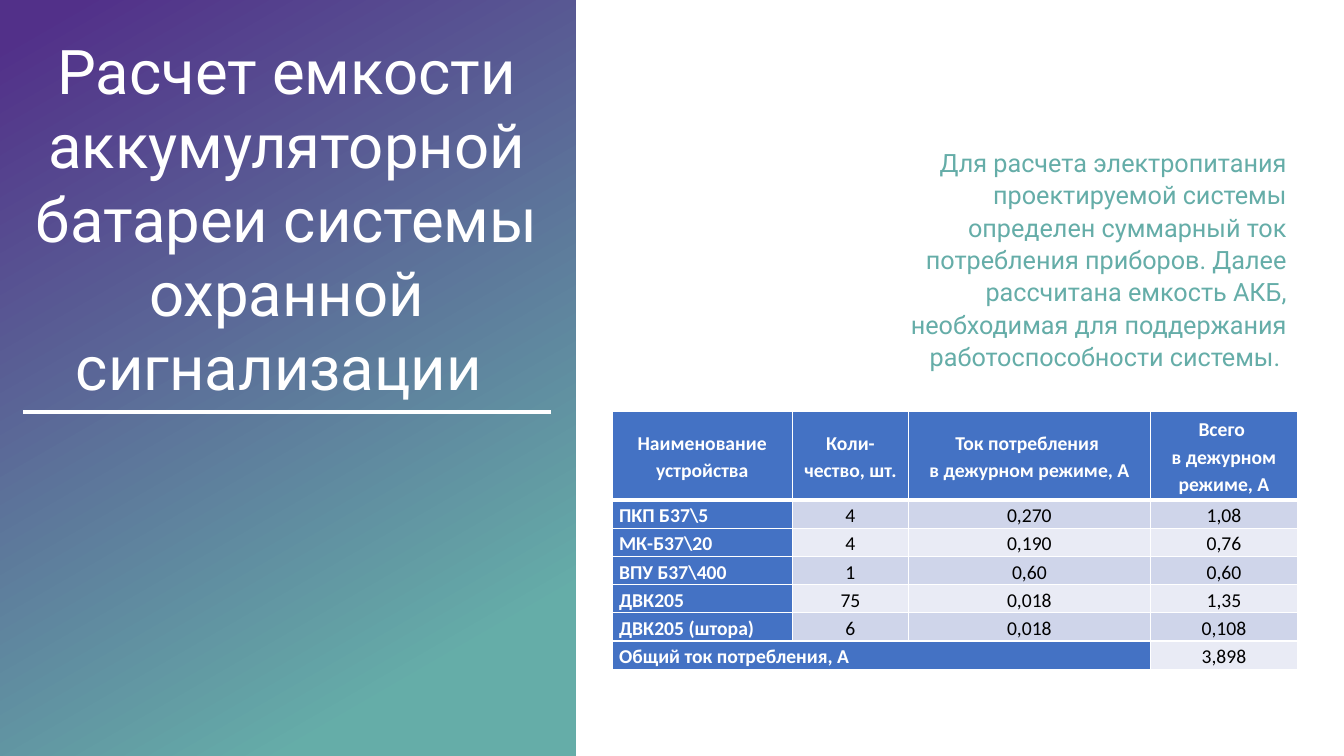
"""Build the slide on sizing the battery of a security alarm system."""
from lxml.etree import SubElement as Sub
from pptx import Presentation
from pptx.dml.color import RGBColor as RGB
from pptx.enum.shapes import MSO_CONNECTOR as Line, MSO_SHAPE as Shape
from pptx.enum.text import MSO_ANCHOR as Anchor, MSO_AUTO_SIZE as Fit, PP_ALIGN as Align
from pptx.oxml.ns import qn
from pptx.util import Inches, Pt

TITLE = "Расчет емкости аккумуляторной батареи системы охранной сигнализации "
NOTE = ("Для расчета электропитания проектируемой системы определен суммарный ток "
        "потребления приборов. Далее рассчитана емкость АКБ, необходимая для "
        "поддержания работоспособности системы. ")
ROWS = [
    ("Наименование устройства", "Коли-\nчество, шт.",
     "Ток потребления \nв дежурном режиме, А", "Всего \nв дежурном режиме, А"),
    ("ПКП Б37\\5", "4", "0,270", "1,08"),
    ("МК-Б37\\20", "4", "0,190", "0,76"),
    ("ВПУ Б37\\400", "1", "0,60", "0,60"),
    ("ДВК205", "75", "0,018", "1,35"),
    ("ДВК205 (штора)", "6", "0,018", "0,108"),
    ("Общий ток потребления, А", "", "", "3,898"),
]
WIDTHS = (1.79, 1.15, 2.4, 1.46)
HEAD, BODY = 0.88, 0.28
COLORS = {"white": "FFFFFF", "black": "000000", "violet": "523089", "teal": "65ADA8",
          "blue": "4472C4", "dark": "CFD5EA", "light": "E9EBF5"}


def color(name):
    return RGB.from_string(COLORS[name])


def style(para, name, size, tint, align, bold=False):
    font = para.font
    font.name, font.size, font.bold = name, Pt(size), bold
    font.color.rgb = color(tint)
    para.alignment = align


def add_text(slide, box, text, size, tint, align):
    frame = slide.shapes.add_textbox(*map(Inches, box)).text_frame
    frame.word_wrap = True
    frame.auto_size = Fit.SHAPE_TO_FIT_TEXT
    para = frame.paragraphs[0]
    para.text = text
    style(para, "Roboto", size, tint, align)
    return para


def add_panel(slide):
    panel = slide.shapes.add_shape(Shape.RECTANGLE, 0, 0, Inches(5.71), Inches(7.5))
    panel.shadow.inherit = False
    panel.line.fill.background()
    panel.fill.gradient()
    panel.fill.gradient_angle = 300
    stops = ((0.04, "violet"), (0.85, "teal"))
    for stop, (place, tint) in zip(panel.fill.gradient_stops, stops):
        stop.position = place
        stop.color.rgb = color(tint)


def add_rule(slide):
    ends = map(Inches, (0.23, 4.09, 5.47, 4.09))
    rule = slide.shapes.add_connector(Line.STRAIGHT, *ends)
    rule.line.color.rgb = color("white")
    rule.line.width = Pt(3)
    Sub(rule._element.spPr, qn("a:effectLst"))


def add_edges(cell, row):
    thick = {"T": 3 if row == 1 else 1, "B": 3 if row == 0 else 1}
    props = cell._tc.get_or_add_tcPr()
    for side in "LRTB":
        edge = Sub(props, qn("a:ln" + side), w=str(Pt(thick.get(side, 1))))
        Sub(Sub(edge, qn("a:solidFill")), qn("a:srgbClr"), val=COLORS["white"])


def fill_cell(cell, row, col, text):
    label = row == 0 or col == 0
    add_edges(cell, row)
    cell.fill.solid()
    cell.fill.fore_color.rgb = color("blue" if label else "dark" if row % 2 else "light")
    cell.vertical_anchor = Anchor.MIDDLE
    cell.margin_left = cell.margin_right = Inches(0.07)
    cell.margin_top = cell.margin_bottom = 0
    para = cell.text_frame.paragraphs[0]
    para.text = text
    para.line_spacing = 1.15
    style(para, "Calibri", 14, "white" if label else "black",
          Align.LEFT if row and col == 0 else Align.CENTER, label)


def add_grid(slide):
    last = len(ROWS) - 1
    size = (6.07, 4.08, sum(WIDTHS), HEAD + BODY * last)
    grid = slide.shapes.add_table(len(ROWS), len(WIDTHS), *map(Inches, size)).table
    for col, width in enumerate(WIDTHS):
        grid.columns[col].width = Inches(width)
    for row, texts in enumerate(ROWS):
        grid.rows[row].height = Inches(BODY if row else HEAD)
        for col, text in enumerate(texts):
            fill_cell(grid.cell(row, col), row, col, text)
    grid.cell(last, 0).merge(grid.cell(last, 2))


def main():
    deck = Presentation()
    deck.slide_width, deck.slide_height = Inches(13.33), Inches(7.5)
    slide = deck.slides.add_slide(deck.slide_layouts[6])
    add_panel(slide)
    add_text(slide, (-0.01, 0.28, 5.71, 3.8), TITLE, 44, "white", Align.CENTER)
    add_rule(slide)
    note = add_text(slide, (8.6, 1.39, 4.26, 2.35), NOTE, 18, "teal", Align.RIGHT)
    note.line_spacing = 1.07
    note.space_after = Pt(8)
    add_grid(slide)
    deck.save("out.pptx")


if __name__ == "__main__":
    main()
